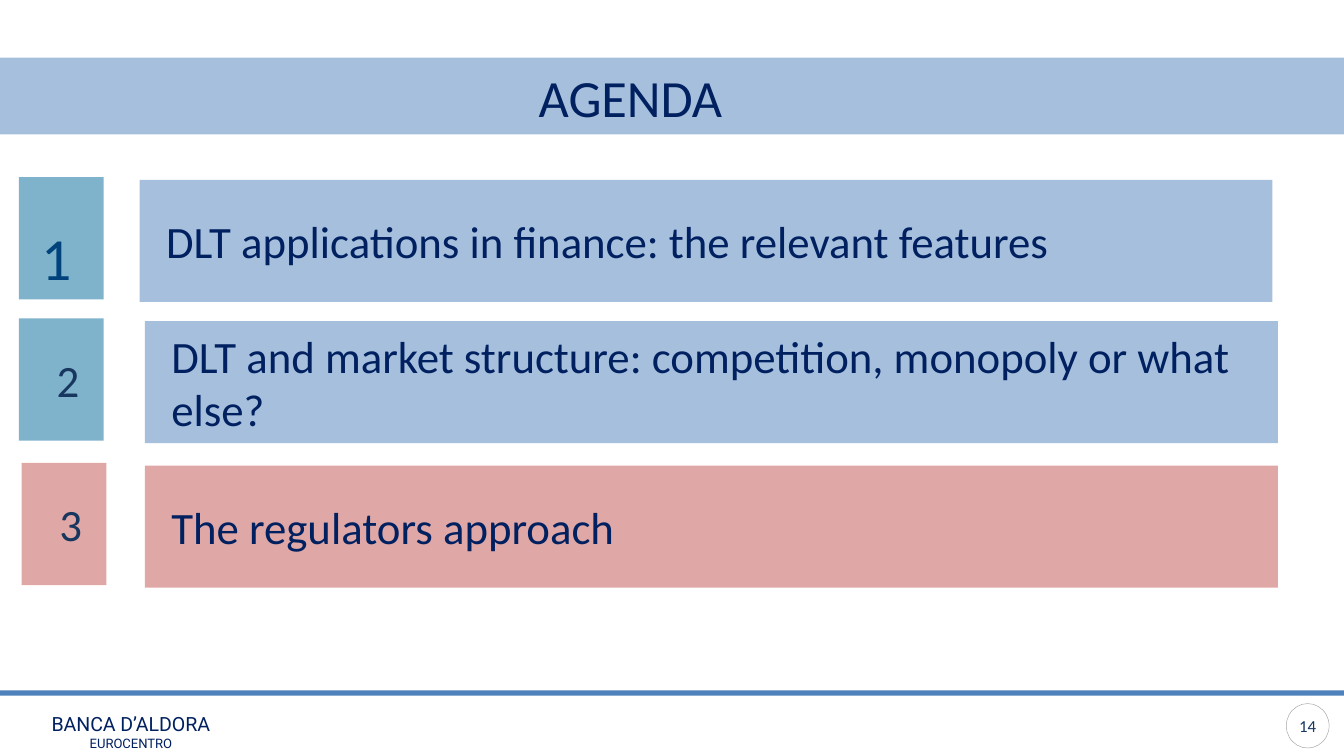
from lxml import etree
from pptx import Presentation
from pptx.dml.color import RGBColor
from pptx.enum.shapes import MSO_SHAPE
from pptx.enum.text import MSO_ANCHOR, MSO_AUTO_SIZE, PP_ALIGN
from pptx.oxml.ns import qn
from pptx.util import Cm, Pt

RECT, OVAL = MSO_SHAPE.RECTANGLE, MSO_SHAPE.OVAL
MID, TOP = MSO_ANCHOR.MIDDLE, MSO_ANCHOR.TOP
LEFT, MIDDLE = PP_ALIGN.LEFT, PP_ALIGN.CENTER
FIXED = MSO_AUTO_SIZE.NONE

NAVY = RGBColor(0x00, 0x20, 0x60)
SLATE = RGBColor(0x17, 0x37, 0x5E)
BLUE = RGBColor(0x4F, 0x81, 0xBD)
TEAL = RGBColor(0x00, 0x66, 0x99)
RED = RGBColor(0xC0, 0x50, 0x4D)
GREY = RGBColor(0xA6, 0xA6, 0xA6)
WHITE = RGBColor(0xFF, 0xFF, 0xFF)

WIDTH, HEIGHT = 25.4, 14.29
INDENT = 0.25
ROWS = [  # box, number, text, badge colour, bar colour
    ((0.36, 3.35, 23.69, 2.36), "1",
     "DLT applications in finance: the relevant features", TEAL, BLUE),
    ((0.36, 6.02, 23.79, 2.36), "2",
     "DLT and market structure: competition, monopoly or what else?",
     TEAL, BLUE),
    ((0.41, 8.75, 23.74, 2.36), "3", "The regulators approach", RED, RED),
]


def to_cm(box):
    return [Cm(side) for side in box]


def add_block(slide, box, fill, kind=RECT, alpha=None):
    block = slide.shapes.add_shape(kind, *to_cm(box))
    block.shadow.inherit = False
    block.fill.solid()
    block.fill.fore_color.rgb = fill
    block.line.fill.background()
    if alpha:
        hue = block.fill._xPr.find(".//" + qn("a:srgbClr"))
        etree.SubElement(hue, qn("a:alpha"), val=str(alpha * 1000))
    return block


def write(shape, lines, align=LEFT, anchor=MID, indent=0, inset=None):
    """Fill a shape with (text, size, colour, font name) lines."""
    frame = shape.text_frame
    frame.word_wrap = True
    frame.auto_size = FIXED
    frame.vertical_anchor = anchor
    if inset is not None:
        for side in ("left", "top", "right", "bottom"):
            setattr(frame, "margin_" + side, Cm(inset))
    for num, (text, size, hue, face) in enumerate(lines):
        para = frame.add_paragraph() if num else frame.paragraphs[0]
        para.text = text
        para.alignment = align
        if indent:
            para._p.get_or_add_pPr().set("marL", str(Cm(indent)))
        for key, value in {"name": face, "size": Pt(size)}.items():
            setattr(para.font, key, value)
        para.font.color.rgb = hue


def add_header(slide, box):
    left, top, width, height = box
    add_block(slide, box, BLUE, alpha=50)
    title = slide.shapes.title
    place = to_cm((left + 7.37, top - 0.15, 9.09, height + 0.33))
    for key, value in zip(("left", "top", "width", "height"), place):
        setattr(title, key, value)
    write(title, [("AGENDA", 28, NAVY, "Calibri")], MIDDLE)
    # Bring the title in front of its band.
    slide.shapes._spTree.append(title._element)


def add_row(slide, box, num, text, tint, fill):
    """Place a numbered badge at the left and a text bar at the right."""
    left, top, width, height = box
    high, wide, drop = 2.31, 21.41, 0.05
    bar = add_block(slide, (left + width - wide, top + drop, wide, high),
                    fill, alpha=50)
    write(bar, [(text, 24, NAVY, "Calibri")], indent=INDENT)
    if num == "1":  # the first number lies under its tinted badge
        label = slide.shapes.add_textbox(
            *to_cm((left + 0.17, top + 0.69, 1.17, 1.63)))
        write(label, [(num, 32, NAVY, "Calibri")], anchor=TOP)
    badge = add_block(slide, (left, top, 1.6, high), tint, alpha=50)
    if num != "1":
        write(badge, [(num, 24, SLATE, "Calibri")], MIDDLE, indent=INDENT)


def add_footer(slide, box):
    left, top, width, height = box
    add_block(slide, (left, top, width, 0.1), BLUE)
    disc = add_block(slide, (left + width - 1.09, top + 0.25, 0.81, 0.84),
                     WHITE, OVAL)
    disc.line.color.rgb = GREY
    disc.line.width = Pt(0.25)
    write(disc, [("14", 9, SLATE, "Calibri")], MIDDLE, inset=0)
    name = slide.shapes.add_textbox(
        *to_cm((left + 0.33, top + 0.28, 4.29, 1.02)))
    write(name, [("BANCA D’ALDORA", 10.5, NAVY, "Roboto"),
                 ("EUROCENTRO", 7, NAVY, "Roboto")], MIDDLE, TOP)


def main():
    deck = Presentation()
    deck.slide_width, deck.slide_height = Cm(WIDTH), Cm(HEIGHT)
    slide = deck.slides.add_slide(deck.slide_layouts[5])
    add_header(slide, (0, 1.09, WIDTH, 1.45))
    for row in ROWS:
        add_row(slide, *row)
    add_footer(slide, (0, 13.05, WIDTH, HEIGHT - 13.05))
    deck.save("out.pptx")


if __name__ == "__main__":
    main()
